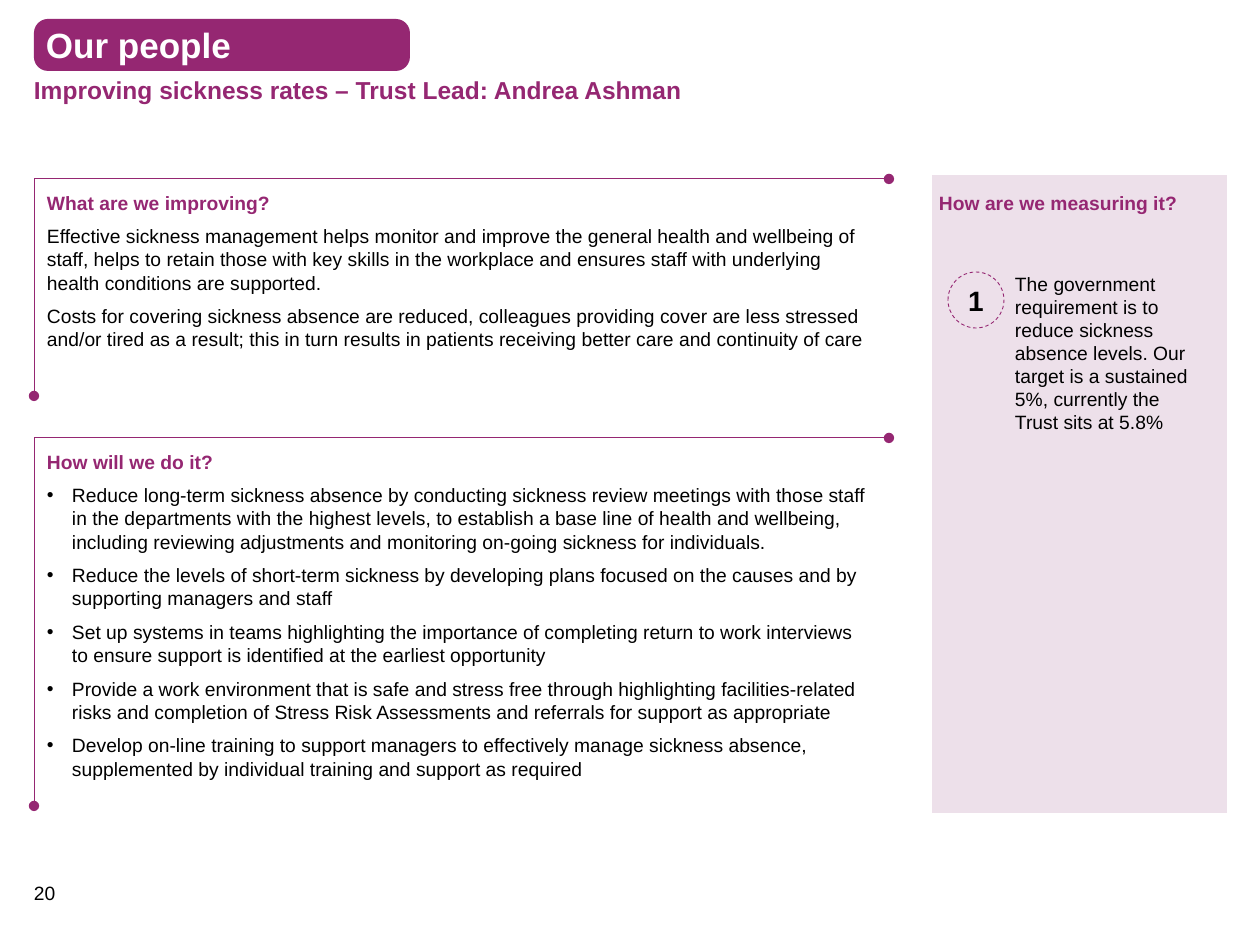
from lxml.etree import SubElement
from pptx import Presentation
from pptx.dml.color import RGBColor
from pptx.enum.dml import MSO_LINE
from pptx.enum.shapes import MSO_SHAPE
from pptx.enum.text import MSO_ANCHOR, PP_ALIGN
from pptx.oxml.ns import qn
from pptx.util import Emu, Pt

PX = 914400 // 126
PLUM, PALE, BLACK, WHITE = "952772", "EDE0EA", "000000", "FFFFFF"
INDENT = 25

BODY = dict(size=11, color=BLACK)
HEADING = dict(size=11, color=PLUM, bold=True)

BADGE = "Our people"
TITLE = "Improving sickness rates – Trust Lead: Andrea Ashman"
PAGE_NUMBER = "20"

# top of bracket, height of bracket, heading, paragraphs, bulleted
SECTIONS = [
    (179, 217, "What are we improving?", [
        "Effective sickness management helps monitor and improve the general health and wellbeing of staff, helps to retain those with key skills in the workplace and ensures staff with underlying health conditions are supported.",
        "Costs for covering sickness absence are reduced, colleagues providing cover are less stressed and/or tired as a result; this in turn results in patients receiving better care and continuity of care",
    ], False),
    (438, 368, "How will we do it?", [
        "Reduce long-term sickness absence by conducting sickness review meetings with those staff in the departments with the highest levels, to establish a base line of health and wellbeing, including reviewing adjustments and monitoring on-going sickness for individuals.",
        "Reduce the levels of short-term sickness by developing plans focused on the causes and by supporting managers and staff",
        "Set up systems in teams highlighting the importance of completing return to work interviews to ensure support is identified at the earliest opportunity",
        "Provide a work environment that is safe and stress free through highlighting facilities-related risks and completion of Stress Risk Assessments and referrals for support as appropriate",
        "Develop on-line training to support managers to effectively manage sickness absence, supplemented by individual training and support as required",
    ], True),
]

MEASURE_HEADING = "How are we measuring it?"
MEASURES = [
    ("1", "The government requirement is to reduce sickness absence levels. Our target is a sustained 5%, currently the Trust sits at 5.8%"),
]


def px(n):
    return Emu(n * PX)


def rgb(color):
    return RGBColor.from_string(color)


def add_bullet(p):
    pPr = p._p.get_or_add_pPr()
    pPr.set("marL", str(px(INDENT)))
    pPr.set("indent", str(px(-INDENT)))
    SubElement(pPr, qn("a:buFont"), typeface="Arial")
    SubElement(pPr, qn("a:buChar"), char="•")


def write(sp, paragraphs, anchor=MSO_ANCHOR.TOP, align=PP_ALIGN.LEFT, inset=0):
    """Fill a shape with (text, font format, bulleted) paragraphs."""
    tf = sp.text_frame
    tf.word_wrap = True
    tf.vertical_anchor = anchor
    for side in ("left", "top", "right", "bottom"):
        setattr(tf, f"margin_{side}", px(inset))
    for i, (text, style, bulleted) in enumerate(paragraphs):
        p = tf.add_paragraph() if i else tf.paragraphs[0]
        p.alignment = align
        p.space_after = Pt(6 if len(paragraphs) > 1 else 0)
        if bulleted:
            add_bullet(p)
        r = p.add_run()
        r.text = text
        r.font.color.rgb = rgb(style["color"])
        values = dict(name="Arial", size=Pt(style["size"]), bold=style.get("bold", False))
        for name, value in values.items():
            setattr(r.font, name, value)


def add_text(s, box, paragraphs, **layout):
    write(s.shapes.add_textbox(*map(px, box)), paragraphs, **layout)


def add_box(s, kind, box, fill):
    sp = s.shapes.add_shape(kind, *map(px, box))
    sp.shadow.inherit = False
    sp.fill.solid()
    sp.fill.fore_color.rgb = rgb(fill)
    sp.line.fill.background()
    return sp


def add_bracket(s, left, top, width, height):
    """Draw an open corner line with a dot at each end."""
    fb = s.shapes.build_freeform(left, top + height, scale=PX)
    fb.add_line_segments([(left, top), (left + width, top)], close=False)
    sp = fb.convert_to_shape()
    sp.shadow.inherit = False
    sp.fill.background()
    sp.line.color.rgb = rgb(PLUM)
    sp.line.width = Pt(0.5)
    ln = sp.line._get_or_add_ln()
    for end in ("a:headEnd", "a:tailEnd"):
        SubElement(ln, qn(end), type="oval")


def add_measure(s, top, number, text):
    sp = add_box(s, MSO_SHAPE.OVAL, (948, top, 56, 56), PALE)
    sp.line.color.rgb = rgb(PLUM)
    sp.line.width = Pt(0.5)
    sp.line.dash_style = MSO_LINE.DASH
    write(sp, [(number, dict(size=16, color=BLACK, bold=True), False)],
          anchor=MSO_ANCHOR.MIDDLE, align=PP_ALIGN.CENTER)
    sp = add_box(s, MSO_SHAPE.RECTANGLE, (1015, top, 193, 164), PALE)
    write(sp, [(text, BODY, False)])


def main():
    prs = Presentation()
    prs.slide_width, prs.slide_height = px(1260), px(945)
    s = prs.slides.add_slide(prs.slide_layouts[6])

    badge = add_box(s, MSO_SHAPE.ROUNDED_RECTANGLE, (34, 19, 376, 52), PLUM)
    badge.adjustments[0] = 0.27
    write(badge, [(BADGE, dict(size=20, color=WHITE, bold=True), False)],
          anchor=MSO_ANCHOR.MIDDLE, inset=8)
    add_text(s, (34, 75, 910, 30), [(TITLE, dict(size=14, color=PLUM, bold=True), False)],
             anchor=MSO_ANCHOR.MIDDLE)

    for top, height, heading, texts, bulleted in SECTIONS:
        add_bracket(s, 34, top, 855, height)
        paragraphs = [(heading, HEADING, False)] + [(t, BODY, bulleted) for t in texts]
        add_text(s, (47, top + 12, 825, height - 36), paragraphs)

    add_box(s, MSO_SHAPE.RECTANGLE, (932, 175, 295, 638), PALE)
    add_text(s, (939, 191, 260, 24), [(MEASURE_HEADING, HEADING, False)])
    for i, (number, text) in enumerate(MEASURES):
        add_measure(s, 272 + i * 180, number, text)

    add_text(s, (34, 881, 69, 24), [(PAGE_NUMBER, BODY, False)])
    prs.save("out.pptx")


if __name__ == "__main__":
    main()
